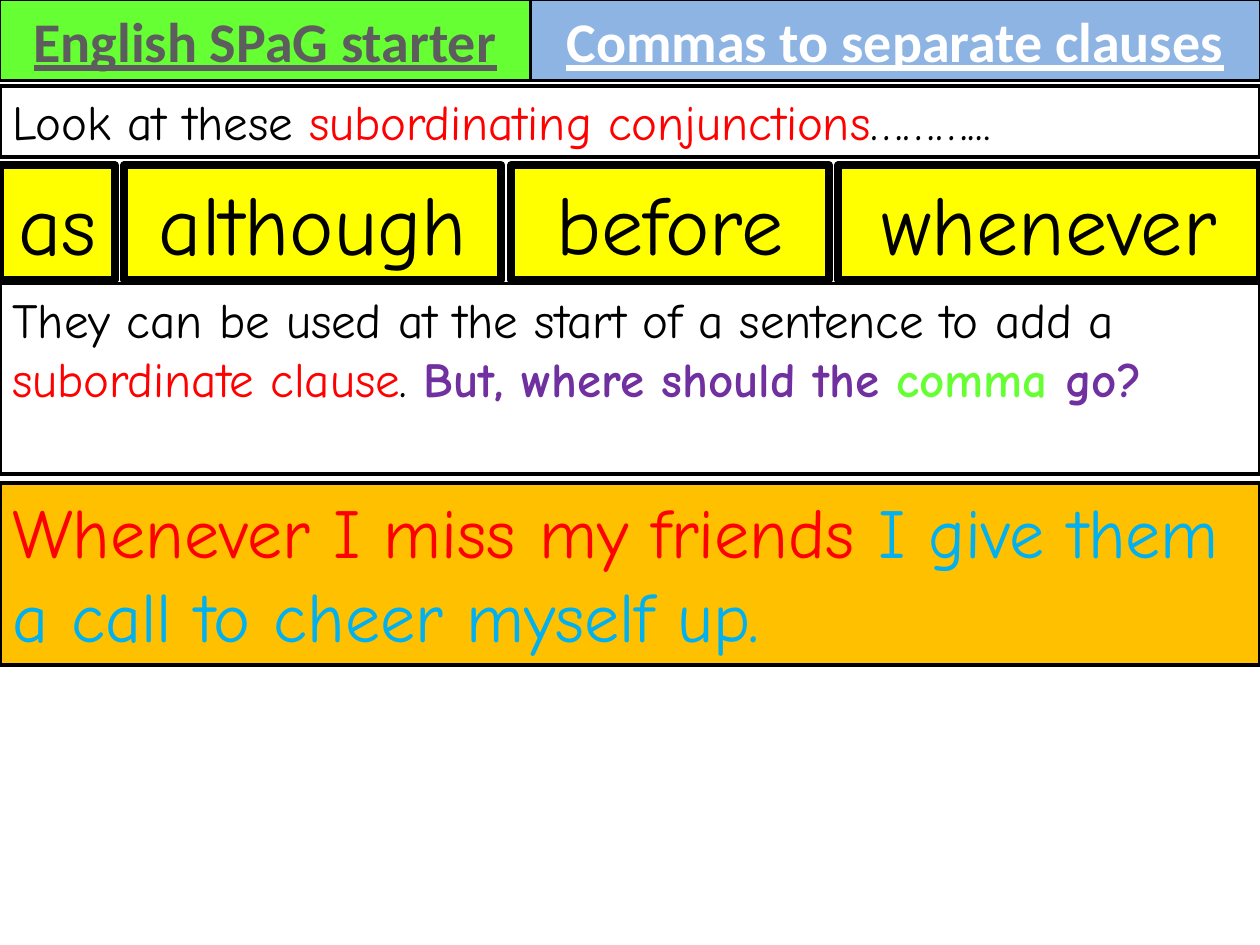
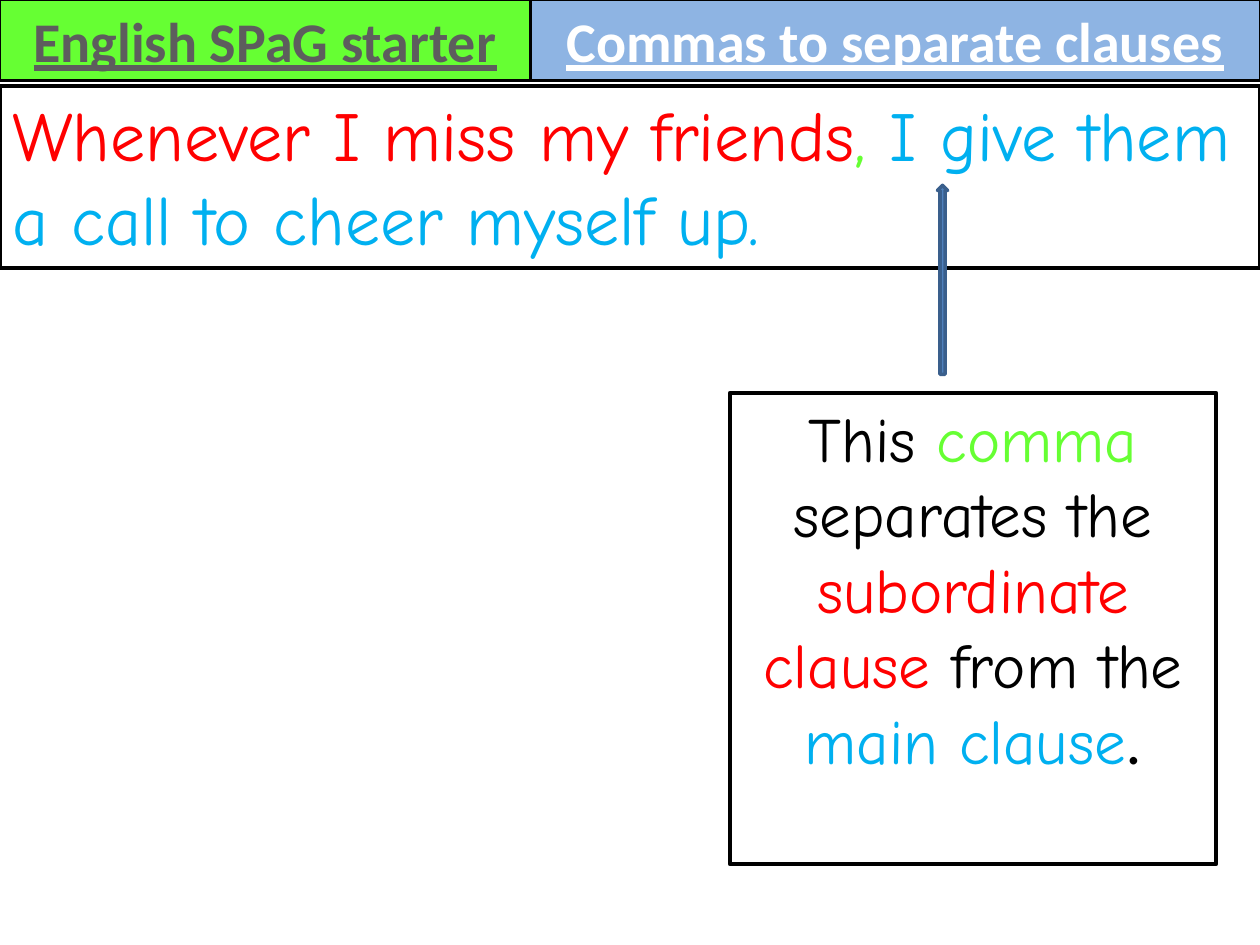
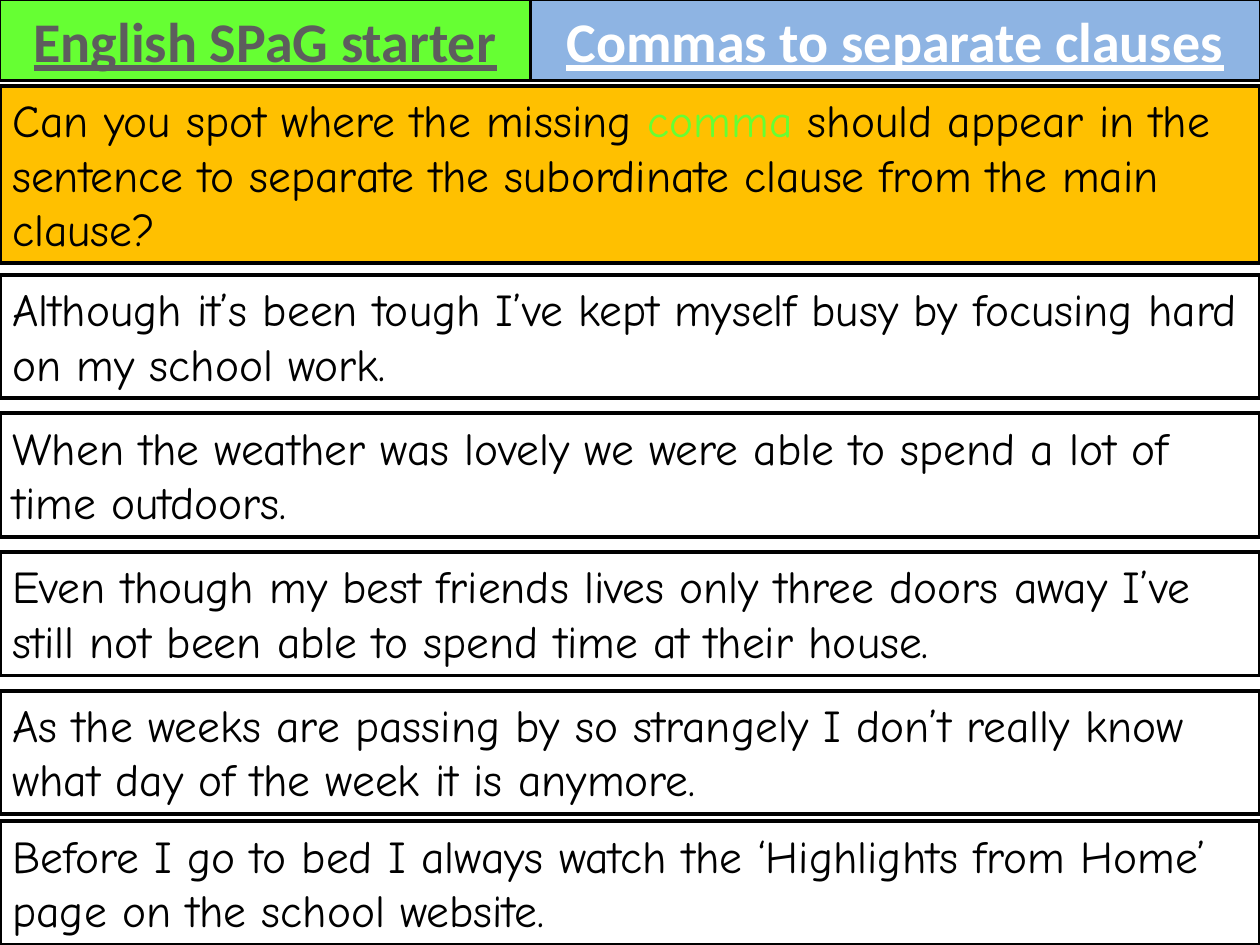
from pptx import Presentation
from pptx.dml.color import RGBColor
from pptx.enum.shapes import MSO_SHAPE as Preset
from pptx.enum.text import PP_ALIGN as Align
from pptx.util import Pt

COLORS = {
    "black": "000000", "white": "FFFFFF", "grey": "5D5D5D", "red": "FF0000",
    "green": "66FF33", "sky": "00B0F0", "purple": "7030A0", "yellow": "FFFF00",
    "orange": "FFC000", "band": "8EB4E3", "arrow": "4F81BD", "arrow_edge": "3A5F8C",
}
BODY_FONT = "Comic Neue"
HEADING_FONT = "Calibri"
PAGE_WIDTH, PAGE_HEIGHT = 720, 540
BAND_HEIGHT, BAND_SPLIT = 46, 303
CONTENT_TOP = 49
SENTENCE_HEIGHT = 104.4


def rgb(name):
    return RGBColor.from_string(COLORS[name])


def add_panel(page, left, top, width, height, size, spans, fill=None, line=2.25, align=Align.LEFT):
    box = page.shapes.add_textbox(Pt(left), Pt(top), Pt(width), Pt(height))
    if fill:
        box.fill.solid()
        box.fill.fore_color.rgb = rgb(fill)
    box.line.color.rgb = rgb("black")
    box.line.width = Pt(line)
    box.text_frame.word_wrap = True
    para = box.text_frame.paragraphs[0]
    para.alignment = align
    for text, color, *style in spans:
        options = {"name": BODY_FONT, "size": Pt(size)}
        options.update(*style)
        span = para.add_run()
        span.text = text
        span.font.color.rgb = rgb(color)
        for option, value in options.items():
            setattr(span.font, option, value)


deck = Presentation()
deck.slide_width, deck.slide_height = Pt(PAGE_WIDTH), Pt(PAGE_HEIGHT)

heading = {"name": HEADING_FONT, "bold": True, "underline": True}
bold = {"bold": True}
pages = []
for number in range(3):
    page = deck.slides.add_slide(deck.slide_layouts[6])
    add_panel(page, 0, 0, BAND_SPLIT, BAND_HEIGHT, 32,
              [("English SPaG starter", "grey", heading)], "green", 1.5, Align.CENTER)
    add_panel(page, BAND_SPLIT, 0, PAGE_WIDTH - BAND_SPLIT, BAND_HEIGHT, 32,
              [("Commas to separate clauses", "white", heading)], "band", 1.5, Align.CENTER)
    pages.append(page)
intro_page, answer_page, practice_page = pages

add_panel(intro_page, 0, CONTENT_TOP, PAGE_WIDTH, 41, 28, [
    ("Look at these ", "black"),
    ("subordinating conjunctions", "red"),
    ("………..", "black"),
    (".", "black", {"name": HEADING_FONT, "size": Pt(18)}),
])

conjunctions = [("as", 65.5), ("although", 215.5), ("before", 181.5), ("whenever", 241)]
conjunction_gap = 5.5
left = 0
for word, width in conjunctions:
    add_panel(intro_page, left, 94.4, width, 65.4, 48,
              [(word, "black")], "yellow", 4.5, Align.CENTER)
    left += width + conjunction_gap

add_panel(intro_page, 0, 162, PAGE_WIDTH, 109, 28, [
    ("They can be used at the start of a sentence to add a ", "black"),
    ("subordinate clause", "red"),
    (". ", "black"),
    ("But, where should the", "purple", bold),
    (" comma ", "green", bold),
    ("go?", "purple", bold),
])
main_clause = ("I give them a call to cheer myself up.", "sky")
add_panel(intro_page, 0, 275.8, PAGE_WIDTH, SENTENCE_HEIGHT, 40,
          [("Whenever I miss my friends ", "red"), main_clause], "orange")

add_panel(answer_page, 417, 224.6, 278, 269.3, 36, [
    ("This ", "black"),
    ("comma", "green"),
    (" separates the ", "black"),
    ("subordinate clause ", "red"),
    ("from the ", "black"),
    ("main clause", "sky"),
    (".", "black", {"name": HEADING_FONT}),
], align=Align.CENTER)
add_panel(answer_page, 0, CONTENT_TOP, PAGE_WIDTH, SENTENCE_HEIGHT, 40,
          [("Whenever I miss my friends", "red"), (", ", "green"), main_clause], "white")
arrow = answer_page.shapes.add_shape(Preset.RIGHT_ARROW, Pt(484.6), Pt(157), Pt(108), Pt(5.8))
arrow.rotation = 270
arrow.shadow.inherit = False
arrow.fill.solid()
arrow.fill.fore_color.rgb = rgb("arrow")
arrow.line.color.rgb = rgb("arrow_edge")
arrow.line.width = Pt(2)

add_panel(practice_page, 0, CONTENT_TOP, PAGE_WIDTH, 101.5, 26, [
    ("Can you spot where the missing ", "black"),
    ("comma", "green"),
    (" should appear in the sentence to separate the subordinate clause from the main clause?", "black"),
], "orange")

sentences = [
    "Although it’s been tough I’ve kept myself busy by focusing hard on my school work.",
    "When the weather was lovely we were able to spend a lot of time outdoors.",
    "Even though my best friends lives only three doors away I’ve still not been able to spend time at their house.",
    "As the weeks are passing by so strangely I don’t really know what day of the week it is anymore.",
    "Before I go to bed I always watch the ‘Highlights from Home’ page on the school website.",
]
row_top, row_step, row_height = 157, 79.2, 70.6
for index, sentence in enumerate(sentences):
    top = min(row_top + index * row_step, PAGE_HEIGHT - row_height)
    add_panel(practice_page, 0, top, PAGE_WIDTH, row_height, 26, [(sentence, "black")], "white")

deck.save("out.pptx")
